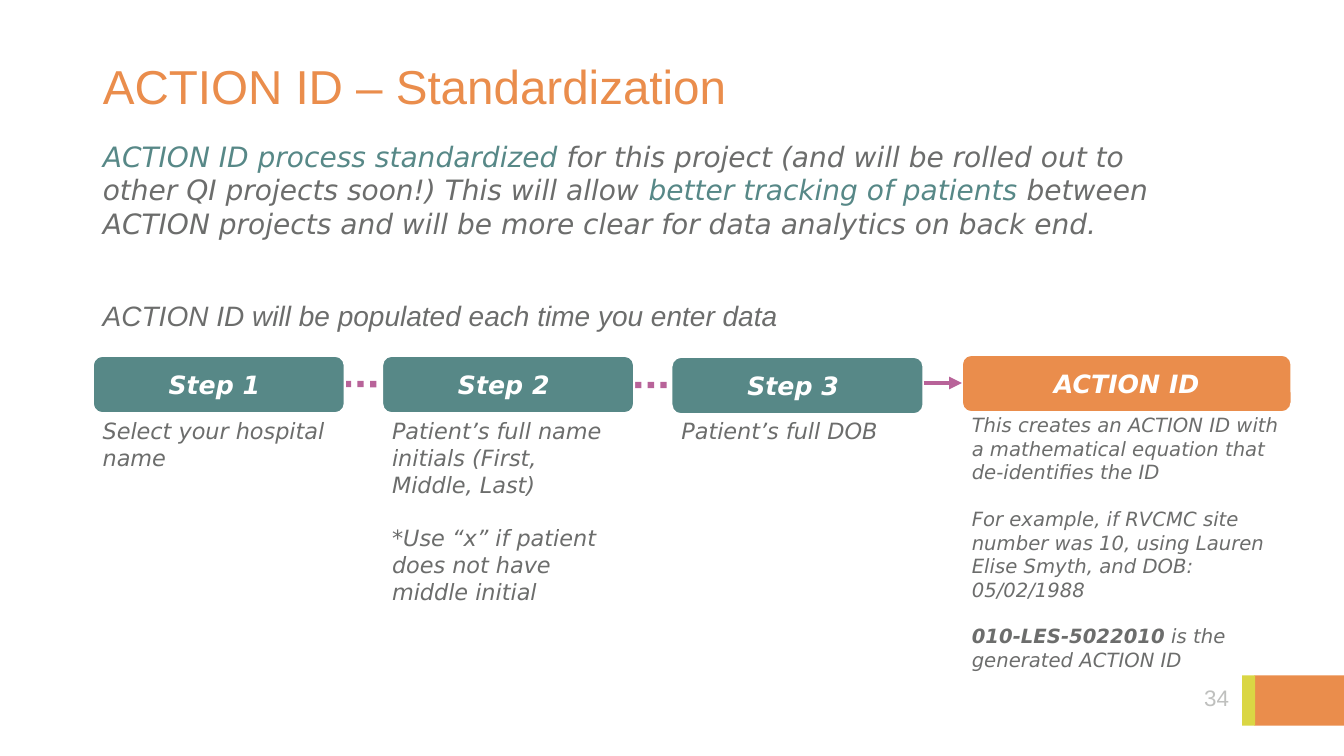
from pptx import Presentation
from pptx.dml.color import RGBColor
from pptx.enum.dml import MSO_LINE
from pptx.enum.shapes import MSO_CONNECTOR, MSO_SHAPE
from pptx.enum.text import MSO_ANCHOR, MSO_AUTO_SIZE, PP_ALIGN
from pptx.oxml.ns import qn
from pptx.util import Inches, Pt
from lxml.etree import SubElement

COLORS = {
    "orange": "EA8D4C",
    "teal": "578887",
    "lime": "DAD644",
    "purple": "B86399",
    "gray": "6C6D6C",
    "pale": "BFC0BE",
    "white": "FFFFFF",
}
HEADING_FONT = "Arial"
BODY_FONT = "DejaVu Sans"


class SlideBuilder:
    def __init__(self, slide):
        self.slide = slide

    def color(self, name):
        return RGBColor.from_string(COLORS[name])

    def format_paragraph(self, paragraph, size, color="gray", font=BODY_FONT, italic=True, bold=False):
        paragraph.font.name = font
        paragraph.font.size = Pt(size)
        paragraph.font.italic = italic
        paragraph.font.bold = bold
        paragraph.font.color.rgb = self.color(color)

    def place(self, shape, left, top, width, height):
        shape.left, shape.top = Inches(left), Inches(top)
        shape.width, shape.height = Inches(width), Inches(height)

    def title(self, text, *box):
        title = self.slide.shapes.title
        self.place(title, *box)
        frame = title.text_frame
        frame.text = text
        frame.vertical_anchor = MSO_ANCHOR.TOP
        frame.auto_size = MSO_AUTO_SIZE.NONE
        paragraph = frame.paragraphs[0]
        paragraph.alignment = PP_ALIGN.LEFT
        paragraph.line_spacing = 0.9
        self.format_paragraph(paragraph, 34, "orange", HEADING_FONT, italic=False)

    def body(self, parts, *box):
        body = self.slide.placeholders[1]
        self.place(body, *box)
        body.text_frame.auto_size = MSO_AUTO_SIZE.NONE
        paragraph = body.text_frame.paragraphs[0]
        paragraph.space_before = Pt(0)
        self.format_paragraph(paragraph, 20)
        properties = paragraph._p.get_or_add_pPr()
        properties.set("marL", "0")
        properties.set("indent", "0")
        properties.insert_element_before(properties.makeelement(qn("a:buNone")), "a:defRPr")
        for text, color in parts:
            run = paragraph.add_run()
            run.text = text
            run.font.color.rgb = self.color(color)

    def text(self, paragraphs, box, size, gap=0, **style):
        shape = self.slide.shapes.add_textbox(*map(Inches, box))
        frame = shape.text_frame
        frame.word_wrap = True
        frame.auto_size = MSO_AUTO_SIZE.SHAPE_TO_FIT_TEXT
        for index, runs in enumerate(paragraphs):
            paragraph = frame.add_paragraph() if index else frame.paragraphs[0]
            paragraph.space_before = Pt(gap if index else 0)
            self.format_paragraph(paragraph, size, **style)
            for text, bold in runs:
                run = paragraph.add_run()
                run.text = text
                if bold:
                    run.font.bold = True
        return shape

    def block(self, kind, color, *box):
        shape = self.slide.shapes.add_shape(kind, *map(Inches, box))
        shape.shadow.inherit = False
        shape.fill.solid()
        shape.fill.fore_color.rgb = self.color(color)
        shape.line.fill.background()
        return shape

    def label(self, text, color, *box):
        shape = self.block(MSO_SHAPE.ROUNDED_RECTANGLE, color, *box)
        shape.line.color.rgb = self.color("white")
        shape.line.width = Pt(1.5)
        frame = shape.text_frame
        frame.text = text
        frame.vertical_anchor = MSO_ANCHOR.MIDDLE
        frame.paragraphs[0].alignment = PP_ALIGN.CENTER
        self.format_paragraph(frame.paragraphs[0], 18, "white", bold=True)

    def line(self, start, end, width, dotted=False, arrow=False):
        connector = self.slide.shapes.add_connector(
            MSO_CONNECTOR.STRAIGHT, *map(Inches, start + end)
        )
        connector.line.color.rgb = self.color("purple")
        connector.line.width = Pt(width)
        if dotted:
            connector.line.dash_style = MSO_LINE.ROUND_DOT
        properties = connector._element.spPr
        if arrow:
            SubElement(properties.find(qn("a:ln")), qn("a:tailEnd"), type="triangle")
        SubElement(properties, qn("a:effectLst"))


def main():
    presentation = Presentation()
    presentation.slide_width = Inches(13.33)
    presentation.slide_height = Inches(7.5)
    builder = SlideBuilder(presentation.slides.add_slide(presentation.slide_layouts[1]))

    builder.block(MSO_SHAPE.RECTANGLE, "orange", 12.44, 6.7, 0.89, 0.5)
    builder.block(MSO_SHAPE.RECTANGLE, "lime", 12.32, 6.7, 0.13, 0.5)
    builder.line((3.42, 3.81), (6.66, 3.82), 4.5, dotted=True)

    number = builder.text(
        [[("34", False)]], (11.15, 6.7, 1.04, 0.45), 16,
        color="pale", font=HEADING_FONT, italic=False,
    )
    number.text_frame.auto_size = MSO_AUTO_SIZE.NONE
    number.text_frame.margin_right = 0
    number.text_frame.vertical_anchor = MSO_ANCHOR.MIDDLE
    number.text_frame.paragraphs[0].alignment = PP_ALIGN.RIGHT

    builder.title("ACTION ID – Standardization", 0.92, 0.58, 11.5, 0.76)
    builder.body(
        [
            ("ACTION ID process standardized ", "teal"),
            ("for this project (and will be rolled out to other QI projects soon!) This will allow ", "gray"),
            ("better tracking of patients ", "teal"),
            ("between ACTION projects and will be more clear for data analytics on back end.", "gray"),
        ],
        0.92, 1.33, 10.6, 1.45,
    )
    builder.text(
        [[("ACTION ID will be populated each time you enter data", False)]],
        (0.92, 2.91, 7.82, 0.44), 20, font=HEADING_FONT,
    )

    steps = [
        (3.53, 2.4, ["Select your hospital name"]),
        (3.53, 2.5, [
            "Patient’s full name initials (First, Middle, Last)",
            "*Use “x” if patient does not have middle initial",
        ]),
        (3.54, 2.5, ["Patient’s full DOB"]),
    ]
    for index, (top, width, details) in enumerate(steps):
        left = 0.92 + 2.87 * index
        builder.label(f"Step {index + 1} ", "teal", left, top, 2.5, 0.57)
        builder.text(
            [[(detail, False)] for detail in details],
            (left, 4.09, width, 0.64), 16, gap=19,
        )

    builder.label("ACTION ID", "orange", 9.54, 3.52, 3.27, 0.57)
    builder.text(
        [
            [("This creates an ACTION ID with a mathematical equation that de-identifies the ID", False)],
            [("For example, if RVCMC site number was 10, using Lauren Elise Smyth, and DOB: 05/02/1988", False)],
            [("010-LES-5022010", True), (" is the generated ACTION ID", False)],
        ],
        (9.54, 4.05, 3.4, 2.69), 14, gap=16.5,
    )
    builder.line((9.16, 3.8), (9.54, 3.8), 3, arrow=True)

    presentation.save("out.pptx")


if __name__ == "__main__":
    main()
